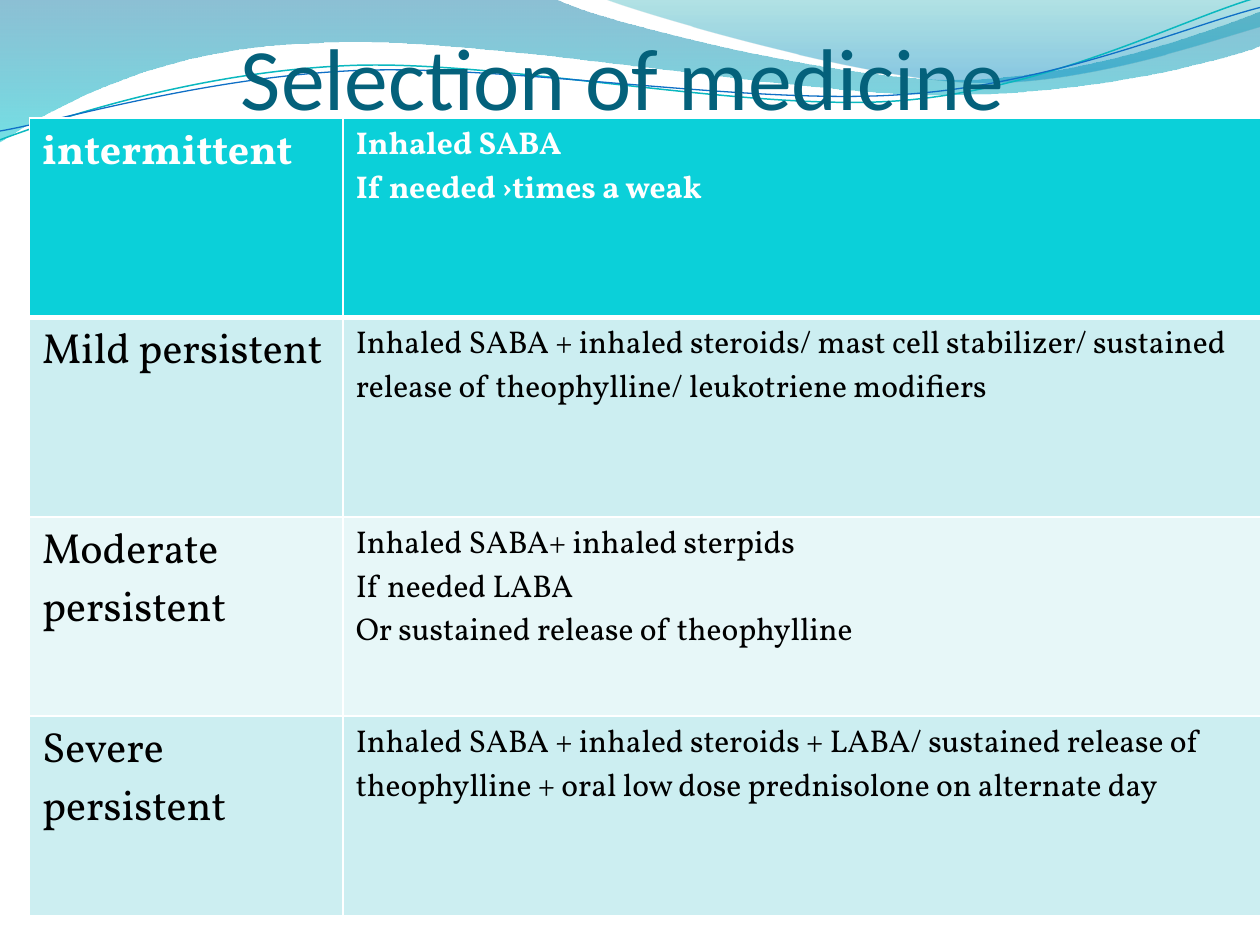
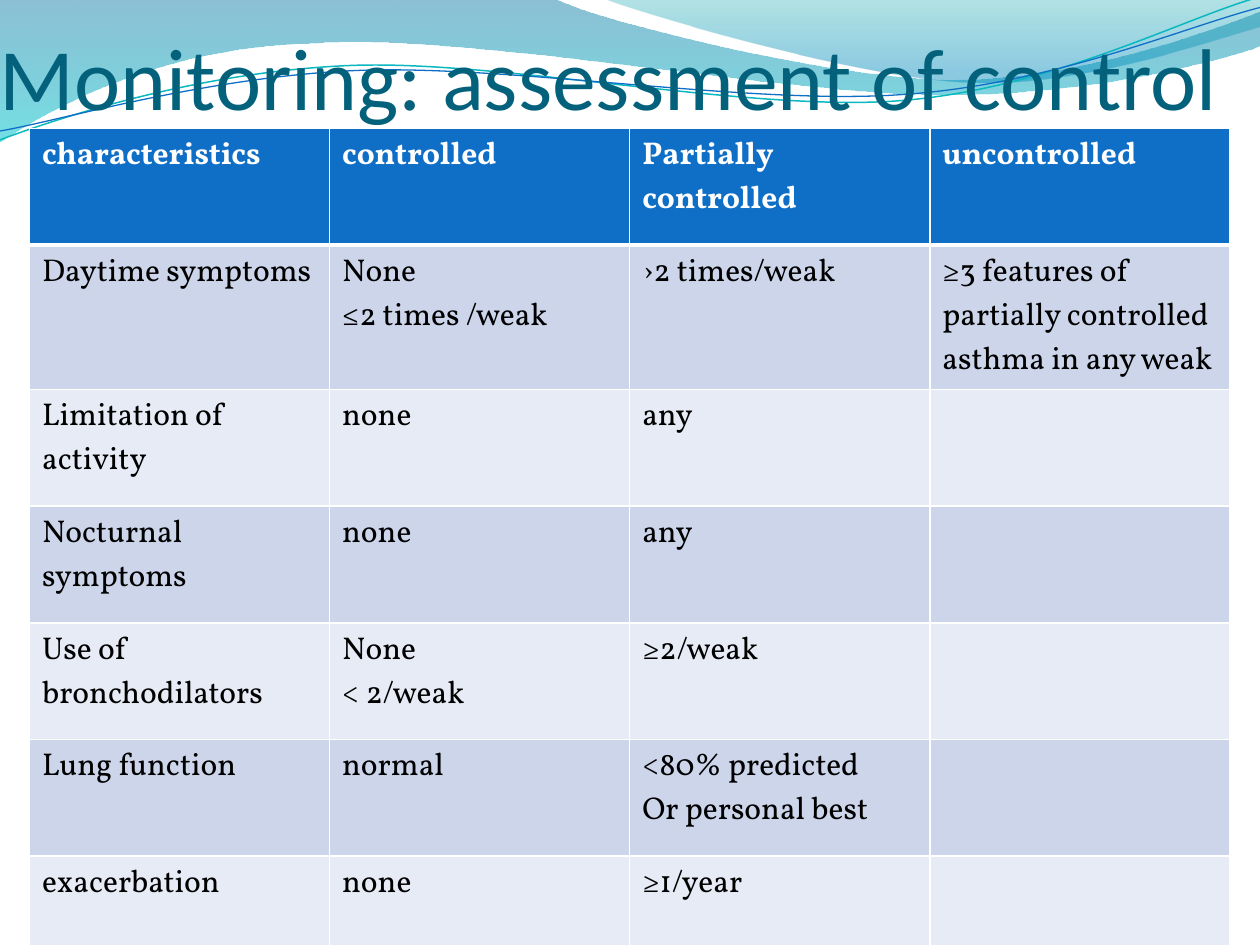
import math

from pptx import Presentation
from pptx import util as u
from pptx.dml.color import RGBColor
from pptx.enum import text
from pptx.oxml import parse_xml
from pptx.oxml.ns import nsdecls

WIDE, HIGH = u.Inches(10), u.Inches(7.5)
HEAD_FONT, BODY_FONT = "Calibri", "Vollkorn"
TILT = -2.7  # degrees, for the thin lines

HUES = {
    "white": "FFFFFF", "black": "000000", "title": "04617B",
    "aqua": "0BD0D9", "aqua_mid": "CCEEF1", "aqua_pale": "E7F7F8",
    "blue": "0F6FC6", "blue_mid": "CCD5EA", "blue_pale": "E7EBF5",
    "teal": "0AB8BF", "deep": "0074A1", "cyan": "00C6CF",
    "sea": "00A1A9", "sky": "008BBF",
}

# Each wave: a start point, then points (2 numbers) or curves (6), in inches.
# Bands carry gradient stops: place, hue, opacity in percent.
BANDS = [
    ([(0, 0), (4.4, -0.01),
      (4.76, 0.17, 6.64, 0.63, 7.58, 0.63),
      (8.53, 0.63, 9.58, 0.26, 10, 0.09), (10.01, 0.36),
      (9.83, 0.44, 8.7, 0.76, 7.46, 0.75),
      (6.22, 0.75, 3.82, 0.28, 2.57, 0.34),
      (1.29, 0.36, 0.46, 0.83, -0.01, 1.13), (0, 0)],
     [(0, "deep", 45), (100, "cyan", 55)]),
    ([(4.79, -0.01),
      (5.09, 0.11, 6.82, 0.62, 7.69, 0.65),
      (8.56, 0.69, 9.61, 0.32, 10, 0.21), (10, 0), (4.79, -0.01)],
     [(0, "sea", 30), (80, "sky", 45)]),
]
# Lines carry their middle, hue and width in points.
LINES = [
    ([(0, 1.11),
      (0.48, 0.93, 1.58, 0.57, 2.77, 0.52),
      (3.95, 0.47, 5.93, 0.89, 7.13, 0.8),
      (8.33, 0.71, 9.38, 0.15, 9.98, -0.02)], (4.99, 0.58), "teal", 0.85),
    ([(0, 1.04),
      (0.47, 0.96, 1.64, 0.61, 2.83, 0.56),
      (4.03, 0.51, 5.97, 0.84, 7.17, 0.75),
      (8.36, 0.67, 9.41, 0.21, 10, 0.06)], (5, 0.59), "blue", 0.75),
]

MEDS = [
    ["intermittent", "Inhaled SABA\nIf needed ›times a weak"],
    ["Mild persistent",
     "Inhaled SABA + inhaled steroids/ mast cell stabilizer/ sustained "
     "release of theophylline/ leukotriene modifiers"],
    ["Moderate persistent",
     "Inhaled SABA+ inhaled sterpids\nIf needed LABA\n"
     "Or sustained release of theophylline"],
    ["Severe persistent",
     "Inhaled SABA + inhaled steroids + LABA/ sustained release of "
     "theophylline + oral low dose prednisolone on alternate day"],
]
CONTROL = [
    ["characteristics", "controlled", "Partially controlled", "uncontrolled"],
    ["Daytime symptoms", "None\n≤2 times /weak", "›2 times/weak",
     "≥3 features of partially controlled asthma in any weak"],
    ["Limitation of activity", "none", "any", ""],
    ["Nocturnal symptoms", "none", "any", ""],
    ["Use of bronchodilators", "None\n< 2/weak", "≥2/weak", ""],
    ["Lung function", "normal", "<80% predicted\nOr personal best", ""],
    ["exacerbation", "none", "≥1/year", ""],
]


def across(share):
    """Percent of the slide's width."""
    return round(WIDE * share / 100)


def down(share):
    """Percent of the slide's height."""
    return round(HIGH * share / 100)


def rgb(hue):
    return RGBColor.from_string(HUES[hue])


def pairs(part):
    return list(zip(part[::2], part[1::2]))


def turn(part, mid, angle):
    """Rotate the points of one part about mid."""
    cos, sin = math.cos(math.radians(angle)), math.sin(math.radians(angle))
    flat = []
    for x, y in pairs(part):
        dx, dy = x - mid[0], y - mid[1]
        flat += [mid[0] + dx * cos - dy * sin, mid[1] + dx * sin + dy * cos]
    return tuple(flat)


def add_wave(slide, wave, close):
    """Lay a polygon through all points, then bend its curved parts."""
    spots = [(u.Inches(x), u.Inches(y)) for part in wave for x, y in pairs(part)]
    pen = slide.shapes.build_freeform(*spots[0], scale=1.0)
    pen.add_line_segments(spots[1:], close=close)
    shape = pen.convert_to_shape()
    shape.shadow.inherit = False
    shape.fill.background()
    legs = iter(shape.element.findall(".//{*}lnTo"))
    for part in wave[1:]:
        leg = next(legs)
        if len(part) == 6:
            bend = parse_xml(f'<a:cubicBezTo {nsdecls("a")}/>')
            leg.addprevious(bend)
            for piece in (leg, next(legs), next(legs)):
                bend.append(piece[0])
                piece.getparent().remove(piece)
    return shape


def add_band(slide, wave, stops):
    shape = add_wave(slide, wave, True)
    shape.line.fill.background()
    marks = "".join(
        f'<a:gs pos="{place * 1000}"><a:srgbClr val="{HUES[hue]}">'
        f'<a:alpha val="{alpha * 1000}"/></a:srgbClr></a:gs>'
        for place, hue, alpha in stops)
    blend = parse_xml(
        f'<a:gradFill {nsdecls("a")} rotWithShape="1"><a:gsLst>{marks}</a:gsLst>'
        '<a:lin ang="5400000" scaled="0"/></a:gradFill>')
    props = shape.element.spPr
    props.replace(props.find("{*}noFill"), blend)


def add_line(slide, wave, mid, hue, width):
    level = [turn(part, mid, -TILT) for part in wave]
    shape = add_wave(slide, level, False)
    shape.rotation = TILT
    shape.line.color.rgb = rgb(hue)
    shape.line.width = u.Pt(width)


def add_run(para, words, font, size, hue, bold=False):
    run = para.add_run()
    run.text = words
    run.font.name, run.font.size, run.font.bold = font, u.Pt(size), bold
    run.font.color.rgb = rgb(hue)


def add_title(slide, words, left, width, align):
    box = slide.shapes.add_textbox(across(left), 0, across(width), down(13.55))
    frame = box.text_frame
    frame.word_wrap = True
    frame.vertical_anchor = text.MSO_ANCHOR.BOTTOM
    frame.margin_left = frame.margin_right = frame.margin_bottom = 0
    para = frame.paragraphs[0]
    para.alignment = align
    add_run(para, words, HEAD_FONT, 50, "title")


def edge_cell(cell, top, base):
    """White borders; top and base are widths in points."""
    props = cell._tc.get_or_add_tcPr()
    for side, width in zip("LRTB", (1, 1, top, base)):
        props.append(parse_xml(
            f'<a:ln{side} {nsdecls("a")} w="{u.Pt(width)}"><a:solidFill>'
            f'<a:srgbClr val="{HUES["white"]}"/></a:solidFill></a:ln{side}>'))


def fill_cell(cell, words, size, hue, bold):
    frame = cell.text_frame
    for i, line in enumerate(words.split("\n")):
        para = frame.add_paragraph() if i else frame.paragraphs[0]
        if line:
            add_run(para, line, BODY_FONT, size, hue, bold)


def add_grid(slide, rows, top, highs, cols, sizes, tint):
    """highs and cols are percents of the slide; sizes are points per column."""
    frame = slide.shapes.add_table(len(rows), len(cols), across(2.34), down(top),
                                   across(sum(cols)), down(sum(highs)))
    table = frame.table
    for col, share in zip(table.columns, cols):
        col.width = across(share)
    for r, row in enumerate(rows):
        table.rows[r].height = down(highs[r])
        head = r == 0
        shade = tint if head else tint + ("_mid" if r % 2 else "_pale")
        for c, words in enumerate(row):
            cell = table.cell(r, c)
            edge_cell(cell, 3 if r == 1 else 1, 3 if head else 1)
            cell.fill.solid()
            cell.fill.fore_color.rgb = rgb(shade)
            fill_cell(cell, words, sizes[c], "white" if head else "black", head)


def add_page(deck):
    """Blank slide with the waves along its top."""
    slide = deck.slides.add_slide(deck.slide_layouts[6])
    slide.background.fill.solid()
    slide.background.fill.fore_color.rgb = rgb("white")
    for band in BANDS:
        add_band(slide, *band)
    for line in LINES:
        add_line(slide, *line)
    return slide


def main():
    deck = Presentation()
    deck.slide_width, deck.slide_height = WIDE, HIGH

    page = add_page(deck)
    add_title(page, "Selection of medicine", 3.9, 91.1, text.PP_ALIGN.CENTER)
    add_grid(page, MEDS, 12.5, [21.1] * 4, [24.9, 72.8], [24, 18], "aqua")

    page = add_page(deck)
    add_title(page, "Monitoring: assessment of control", 0, 100, text.PP_ALIGN.LEFT)
    add_grid(page, CONTROL, 13.6, [12.34, 15.3] + [12.34] * 5,
             [23.82] * 4, [18] * 4, "blue")

    deck.save("out.pptx")


if __name__ == "__main__":
    main()
